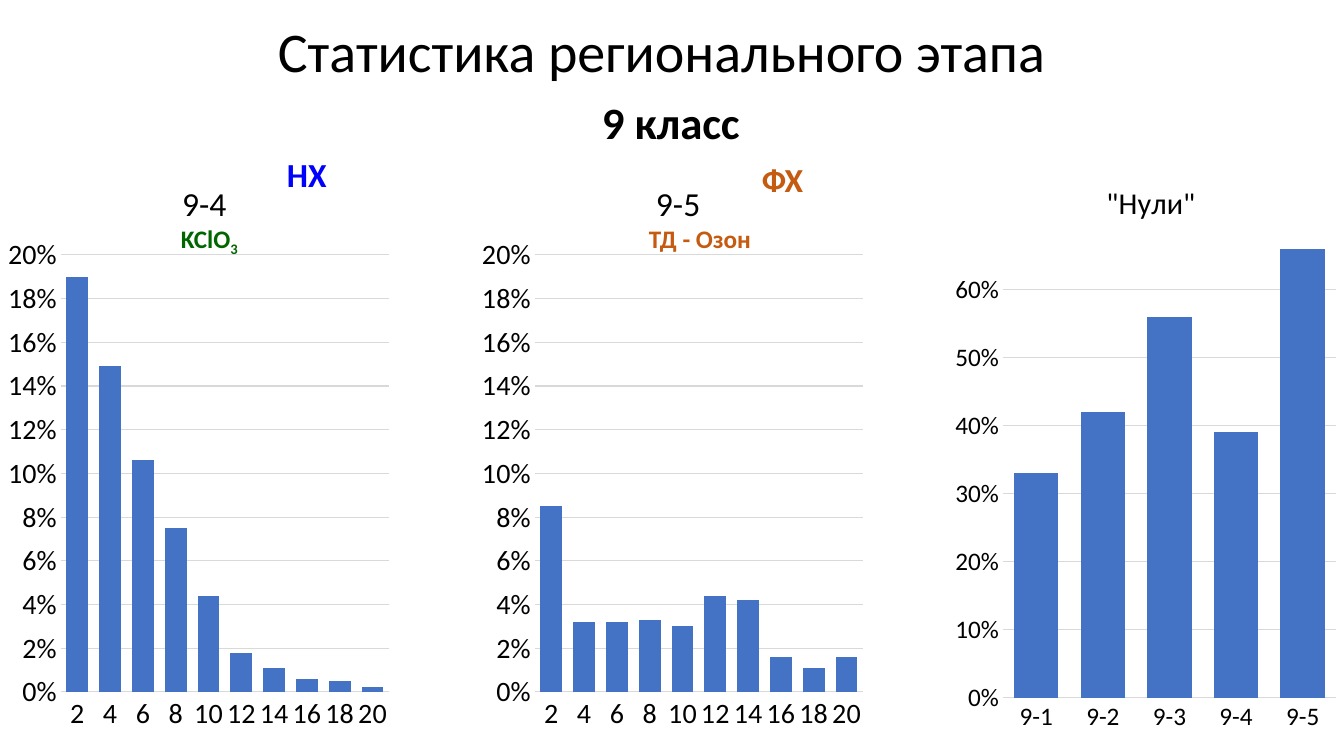
from pptx import Presentation
from pptx.chart.data import CategoryChartData
from pptx.dml.color import RGBColor
from pptx.enum.chart import XL_CHART_TYPE, XL_TICK_MARK
from pptx.enum.text import MSO_AUTO_SIZE
from pptx.oxml import parse_xml
from pptx.oxml.ns import nsdecls, qn
from pptx.util import Emu, Pt

PX = 914400 * 10 // 1008
COLUMN = XL_CHART_TYPE.COLUMN_CLUSTERED
NO_TICK = XL_TICK_MARK.NONE
FIT = MSO_AUTO_SIZE.SHAPE_TO_FIT_TEXT

FONT = "Calibri"
BLACK = RGBColor(0x00, 0x00, 0x00)
GRAY = RGBColor(0xD9, 0xD9, 0xD9)
BAR = RGBColor(0x44, 0x72, 0xC4)
BLUE = RGBColor(0x00, 0x00, 0xFF)
RUST = RGBColor(0xC5, 0x5A, 0x11)
GREEN = RGBColor(0x00, 0x66, 0x00)

CHART_W, CHART_H = 397, 596
MARKS = [str(n) for n in range(2, 21, 2)]
TASKS = [f"9-{n}" for n in range(1, 6)]

# left, top, title, title left, labels, values, size, (max, step), plot box
CHARTS = [
    (0, 148, "9-4", 176, MARKS,
     [0.19, 0.149, 0.106, 0.075, 0.044, 0.018, 0.011, 0.006, 0.005, 0.002],
     20, (0.2, 0.02), (61, 107, 328, 437)),
    (474, 148, "9-5", 176, MARKS,
     [0.085, 0.032, 0.032, 0.033, 0.03, 0.044, 0.042, 0.016, 0.011, 0.016],
     20, (0.2, 0.02), (61, 107, 328, 437)),
    (947, 149, '"Нули"', 154, TASKS,
     [0.33, 0.42, 0.56, 0.39, 0.66],
     18, (0.68, 0.1), (56, 86, 333, 463)),
]

# box, text, subscript, size, colour, bold
LABELS = [
    ((268, 12, 808, 78), "Статистика регионального этапа", "", 40, BLACK, False),
    ((592, 90, 159, 64), "9 класс", "", 32, BLACK, True),
    ((277, 149, 60, 50), "НХ", "", 24, BLUE, True),
    ((752, 154, 62, 50), "ФХ", "", 24, RUST, True),
    ((171, 218, 79, 40), "KClO", "3", 18, GREEN, True),
    ((639, 218, 123, 40), "ТД - Озон", "", 18, RUST, True),
]


def scale(*sizes):
    return [Emu(size * PX) for size in sizes]


def style(font, size, color=BLACK, bold=False):
    values = {"name": FONT, "size": Pt(size), "bold": bold}
    for name, value in values.items():
        setattr(font, name, value)
    font.color.rgb = color


def rule(line):
    line.color.rgb = GRAY
    line.width = Pt(0.75)


def place(node, index, left, top, *size):
    """Fix a chart part at px offsets from the chart's corner."""
    old = node.find(qn("c:layout"))
    if old is not None:
        node.remove(old)
    parts = '<c:layoutTarget val="inner"/>' if size else ""
    parts += '<c:xMode val="edge"/><c:yMode val="edge"/>'
    spans = (CHART_W, CHART_H) * 2
    for tag, value, span in zip("xywh", (left, top, *size), spans):
        parts += f'<c:{tag} val="{value / span:.4f}"/>'
    node.insert(index, parse_xml(
        f'<c:layout {nsdecls("c")}><c:manualLayout>{parts}'
        '</c:manualLayout></c:layout>'))


def add_bars(slide, left, top, title, title_x, names, values, size, reach, plot_box):
    data = CategoryChartData(number_format="0%")
    data.categories = names
    data.add_series("Series 1", values)
    box = scale(left, top, CHART_W, CHART_H)
    chart = slide.shapes.add_chart(COLUMN, *box, data).chart
    style(chart.font, size)
    chart.has_legend = False

    frame = chart.chart_title.text_frame
    frame.text = title
    style(frame.paragraphs[0].runs[0].font, size * 1.2)
    chart.chart_title.include_in_layout = False
    place(chart.chart_title._element, 1, title_x, 27)
    place(chart._chartSpace.chart.plotArea, 0, *plot_box)

    plot = chart.plots[0]
    plot.gap_width = 50
    plot.vary_by_categories = False
    fill = plot.series[0].format.fill
    fill.solid()
    fill.fore_color.rgb = BAR

    cats, vals = chart.category_axis, chart.value_axis
    for axis in (cats, vals):
        axis.major_tick_mark = axis.minor_tick_mark = NO_TICK
        style(axis.tick_labels.font, size)
    rule(cats.format.line)
    vals.format.line.fill.background()
    vals.minimum_scale = 0
    vals.maximum_scale, vals.major_unit = reach
    vals.tick_labels.number_format = "0%"
    vals.tick_labels.number_format_is_linked = False
    rule(vals.major_gridlines.format.line)


def add_label(slide, box, text, sub, size, color, bold):
    frame = slide.shapes.add_textbox(*scale(*box)).text_frame
    frame.word_wrap = False
    frame.auto_size = FIT
    line = frame.paragraphs[0]
    for part in filter(None, (text, sub)):
        run = line.add_run()
        run.text = part
        style(run.font, size, color, bold)
    if sub:
        run.font._element.set("baseline", "-25000")


def main():
    deck = Presentation()
    deck.slide_width, deck.slide_height = scale(1344, 756)
    slide = deck.slides.add_slide(deck.slide_layouts[6])
    for chart in CHARTS:
        add_bars(slide, *chart)
    for label in LABELS:
        add_label(slide, *label)
    deck.save("out.pptx")


if __name__ == "__main__":
    main()
